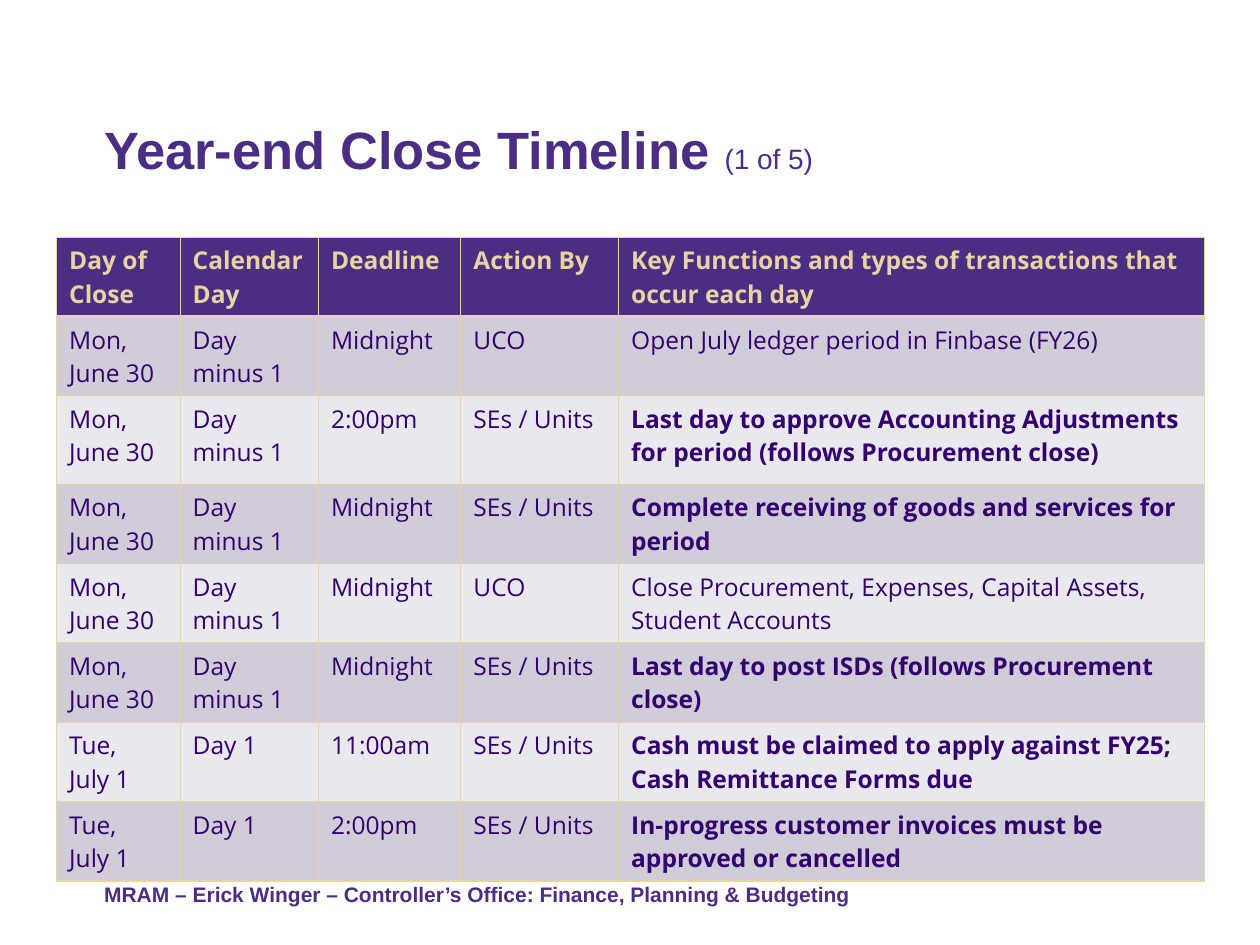
from pptx import Presentation
from pptx.dml.color import RGBColor
from pptx.enum.text import MSO_ANCHOR as Anchor
from pptx.oxml import parse_xml
from pptx.oxml.ns import nsdecls
from pptx.util import Cm, Pt

PURPLE, DARK_PURPLE, GOLD = "4B2E83", "33006F", "E8D3A2"
BANDS = ["D0CDD9", "E9E8ED"]
THIN, THICK = 0.75, 1.9

COLUMN_WIDTHS = [2.49, 2.79, 2.87, 3.18, 11.81]
ROW_HEIGHTS = [1.6, 1.6, 1.78, 1.6, 1.6, 1.6, 1.6, 1.6]
HEADINGS = ["Day of Close", "Calendar Day", "Deadline", "Action By",
            "Key Functions and types of transactions that occur each day"]

# Day of close, calendar day, deadline, action by, key function
UNITS = "SEs / Units"
DEADLINES = [
    ("Mon,\nJune 30", "Day minus 1", "Midnight", "UCO",
     "Open July ledger period in Finbase (FY26)"),
    ("Mon,\nJune 30", "Day minus 1", "2:00pm", UNITS,
     "Last day to approve Accounting Adjustments for period (follows Procurement close)"),
    ("Mon,\nJune 30", "Day minus 1", "Midnight", UNITS,
     "Complete receiving of goods and services for period"),
    ("Mon, June 30", "Day minus 1", "Midnight", "UCO",
     "Close Procurement, Expenses, Capital Assets, Student Accounts"),
    ("Mon, June 30", "Day minus 1", "Midnight", UNITS,
     "Last day to post ISDs (follows Procurement close)"),
    ("Tue,\nJuly 1", "Day 1", "11:00am", UNITS,
     "Cash must be claimed to apply against FY25; Cash Remittance Forms due"),
    ("Tue,\nJuly 1", "Day 1", "2:00pm", UNITS,
     "In-progress customer invoices must be approved or cancelled"),
]


def rgb(value):
    return RGBColor.from_string(value)


def add_span(para, text, *, size, color, font="Arial", bold=False):
    span = para.add_run()
    span.text = text
    span.font.name = font
    span.font.size = Pt(size)
    span.font.bold = bold
    span.font.color.rgb = rgb(color)


def add_text_line(page, left, top, width, height, line_spacing):
    """Add a bottom-anchored text box and return its paragraph."""
    box = page.shapes.add_textbox(Cm(left), Cm(top), Cm(width), Cm(height))
    box.text_frame.word_wrap = True
    box.text_frame.vertical_anchor = Anchor.BOTTOM
    para = box.text_frame.paragraphs[0]
    para.line_spacing = line_spacing
    return para


def set_borders(cell, color, **widths):
    properties = cell._tc.get_or_add_tcPr()
    for side in "LRTB":
        properties.append(parse_xml(
            f'<a:ln{side} {nsdecls("a")} w="{Pt(widths.get(side, THIN))}">'
            f'<a:solidFill><a:srgbClr val="{color}"/></a:solidFill></a:ln{side}>'))


def fill_cell(cell, text, *, fill, color, bold, **border_widths):
    set_borders(cell, GOLD, **border_widths)
    cell.fill.solid()
    cell.fill.fore_color.rgb = rgb(fill)
    frame = cell.text_frame
    for index, line in enumerate(text.split("\n")):
        para = frame.add_paragraph() if index else frame.paragraphs[0]
        add_span(para, line, size=14, color=color, font="Open Sans", bold=bold)


def add_timeline(page):
    table = page.shapes.add_table(
        len(ROW_HEIGHTS), len(COLUMN_WIDTHS), Cm(1.14), Cm(4.78),
        Cm(sum(COLUMN_WIDTHS)), Cm(sum(ROW_HEIGHTS))).table
    for column, width in zip(table.columns, COLUMN_WIDTHS):
        column.width = Cm(width)
    for row, height in zip(table.rows, ROW_HEIGHTS):
        row.height = Cm(height)

    # Header row
    for column, heading in enumerate(HEADINGS):
        fill_cell(table.cell(0, column), heading,
                  fill=PURPLE, color=GOLD, bold=True, B=THICK)

    # Banded rows; the functions that units act on are bold
    for row, deadline in enumerate(DEADLINES, start=1):
        for column, text in enumerate(deadline):
            fill_cell(table.cell(row, column), text,
                      fill=BANDS[(row - 1) % 2], color=DARK_PURPLE,
                      bold=column == 4 and deadline[3] == UNITS,
                      T=THICK if row == 1 else THIN)


def main():
    deck = Presentation()
    deck.slide_width, deck.slide_height = Cm(25.4), Cm(19.05)
    page = deck.slides.add_slide(deck.slide_layouts[6])

    # Title
    title = add_text_line(page, 1.85, 1.04, 22.73, 2.74, 0.9)
    add_span(title, "Year-end Close Timeline ", size=30, color=PURPLE, bold=True)
    add_span(title, "(1 of 5)", size=16, color=PURPLE)

    # Footer
    footer = add_text_line(page, 1.85, 17.5, 20.09, 0.91, 1.5)
    add_span(footer, "MRAM – Erick Winger – Controller’s Office: "
             "Finance, Planning & Budgeting", size=12, color=PURPLE, bold=True)

    add_timeline(page)
    deck.save("out.pptx")


if __name__ == "__main__":
    main()
